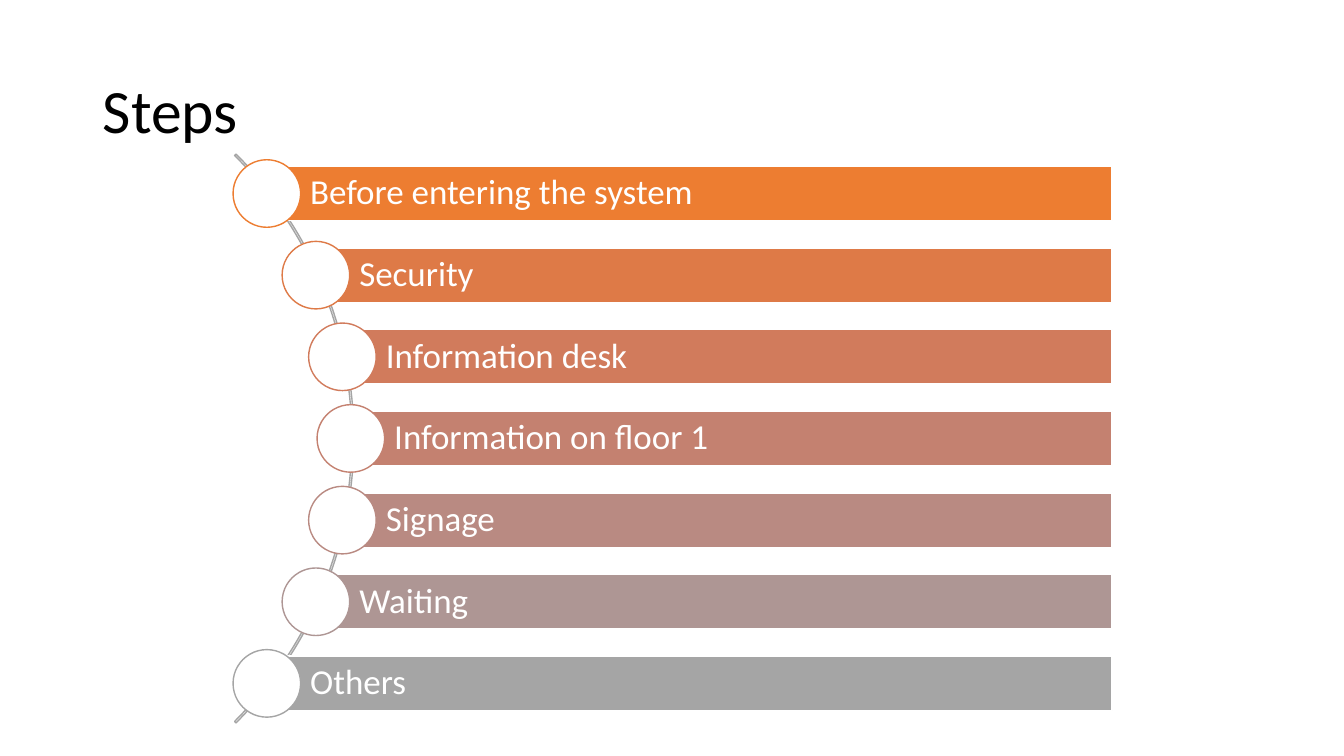
from math import sqrt

from pptx import Presentation
from pptx.dml.color import RGBColor
from pptx.enum.shapes import MSO_SHAPE
from pptx.enum.text import MSO_ANCHOR, PP_ALIGN
from pptx.util import Inches, Pt

WHITE = RGBColor(0xFF, 0xFF, 0xFF)
BLACK = RGBColor(0x00, 0x00, 0x00)
GRAY = RGBColor(0xA5, 0xA5, 0xA5)

STEPS = [
    ("Before entering the system", RGBColor(0xED, 0x7D, 0x31)),
    ("Security", RGBColor(0xDE, 0x7A, 0x47)),
    ("Information desk", RGBColor(0xD1, 0x7B, 0x5C)),
    ("Information on floor 1", RGBColor(0xC4, 0x81, 0x70)),
    ("Signage", RGBColor(0xB9, 0x8A, 0x82)),
    ("Waiting", RGBColor(0xAE, 0x96, 0x94)),
    ("Others", GRAY),
]

ARC_X, ARC_Y, RADIUS = -0.48, 4.35, 3.99
TRACK = 3.96  # radius on which the circle centres lie
PITCH = 0.81
BAR_END, BAR_H = 11.03, 0.54
DOT = 0.67


class Deck:
    font = "Calibri"

    def __init__(self):
        self.prs = Presentation()
        self.prs.slide_width = Inches(13.33)
        self.prs.slide_height = Inches(7.5)
        self.slide = self.prs.slides.add_slide(self.prs.slide_layouts[5])

    def label(self, shape, text, size=25, color=WHITE, inset=(0.1, 0.05, 0.1, 0.05)):
        """Put one left-aligned, vertically centred paragraph in a shape."""
        frame = shape.text_frame
        frame.word_wrap = True
        frame.vertical_anchor = MSO_ANCHOR.MIDDLE
        (frame.margin_left, frame.margin_top,
         frame.margin_right, frame.margin_bottom) = map(Inches, inset)
        para = frame.paragraphs[0]
        para.alignment = PP_ALIGN.LEFT
        para.line_spacing = 0.9
        run = para.add_run()
        run.text = text
        run.font.name = self.font
        run.font.size = Pt(size)
        run.font.color.rgb = color

    def title(self, text, x, y, w, h):
        shape = self.slide.shapes.title
        shape.left, shape.top = Inches(x), Inches(y)
        shape.width, shape.height = Inches(w), Inches(h)
        self.label(shape, text, size=44, color=BLACK)

    def shape(self, kind, x, y, w, h, line, fill=None):
        shape = self.slide.shapes.add_shape(
            kind, Inches(x), Inches(y), Inches(w), Inches(h))
        shape.shadow.inherit = False
        if fill is None:
            shape.fill.background()
        else:
            shape.fill.solid()
            shape.fill.fore_color.rgb = fill
        shape.line.color.rgb = line
        shape.line.width = Pt(1)
        return shape

    def arc(self):
        size = 2 * RADIUS
        arc = self.shape(MSO_SHAPE.BLOCK_ARC, ARC_X - RADIUS, ARC_Y - RADIUS,
                         size, size, GRAY)
        # start and end angle (315° and 45°), then thickness
        for i, value in enumerate((189, 27, 0.02 / size)):
            arc.adjustments[i] = value

    def step(self, text, color, drop):
        """Draw a bar and its circle, drop inches below the arc's centre."""
        x = ARC_X + sqrt(TRACK ** 2 - drop ** 2)
        y = ARC_Y + drop
        bar = self.shape(MSO_SHAPE.RECTANGLE, x, y - BAR_H / 2,
                         BAR_END - x, BAR_H, WHITE, color)
        self.label(bar, text, inset=(0.43, 0.07, 0.07, 0.07))
        self.shape(MSO_SHAPE.OVAL, x - DOT / 2, y - DOT / 2,
                   DOT, DOT, color, WHITE)


def main():
    deck = Deck()
    deck.title("Steps", 0.92, 0.4, 11.5, 1.45)
    deck.arc()
    middle = len(STEPS) // 2
    for i, (text, color) in enumerate(STEPS):
        deck.step(text, color, (i - middle) * PITCH)
    deck.prs.save("out.pptx")


if __name__ == "__main__":
    main()
